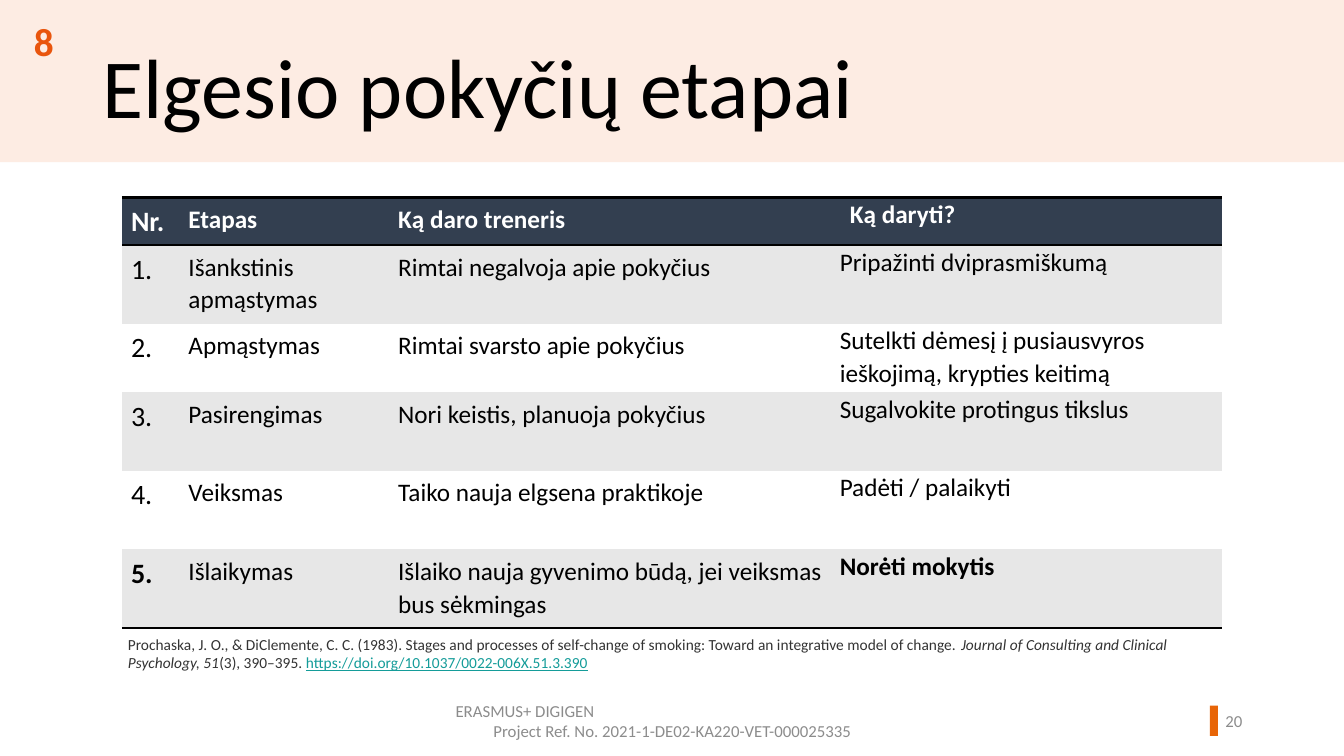
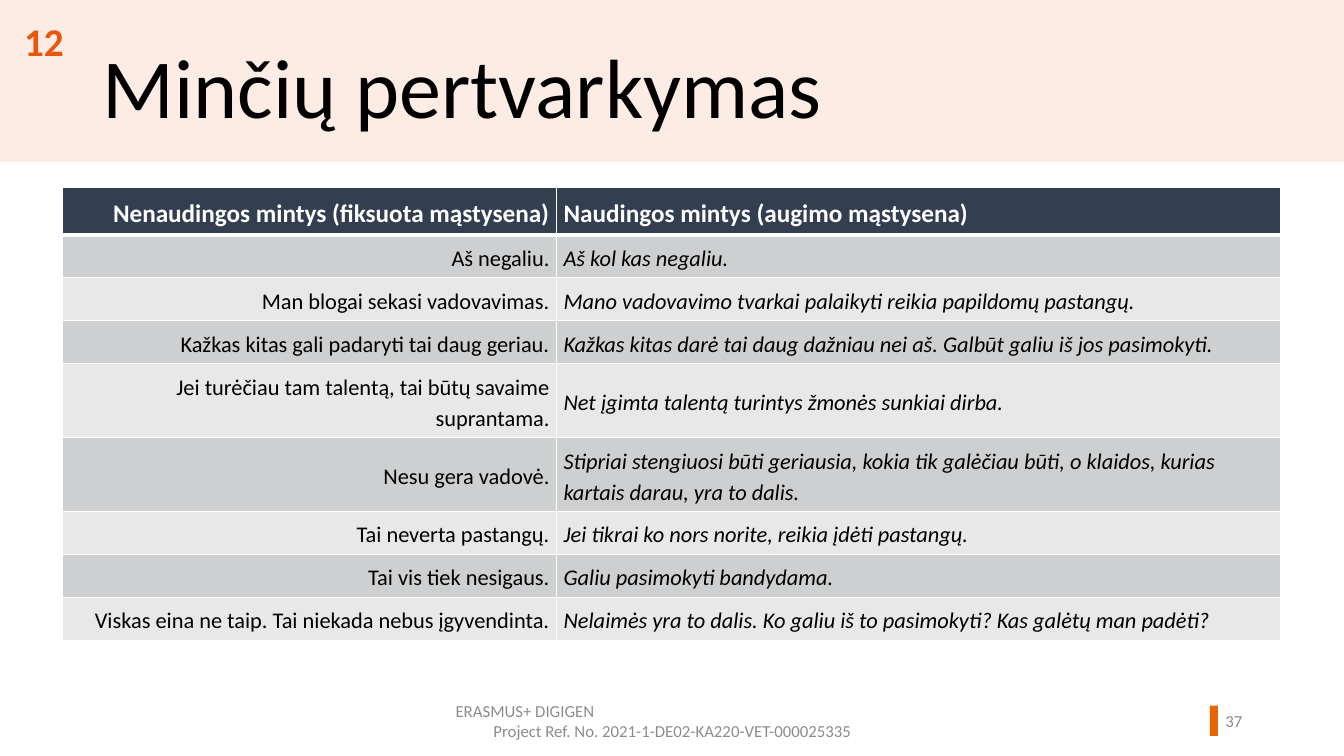
"""Build two slides on stages of behaviour change and on reframing thoughts."""
from lxml import etree
from pptx import Presentation
from pptx.dml.color import RGBColor
from pptx.enum.shapes import MSO_SHAPE
from pptx.enum.text import MSO_ANCHOR, PP_ALIGN
from pptx.oxml.ns import qn
from pptx.util import Inches, Pt

LEFT, CENTER, RIGHT = PP_ALIGN.LEFT, PP_ALIGN.CENTER, PP_ALIGN.RIGHT
TOP, MIDDLE = MSO_ANCHOR.TOP, MSO_ANCHOR.MIDDLE
RECT = MSO_SHAPE.RECTANGLE
FONT = "Calibri"
NO_STYLE = "{2D5ABB26-0587-4C30-8999-92F81FD0307C}"
WIDTH, HEIGHT = 13.33, 7.5
C = {
    "band": "FDECE3", "marker": "E86507", "number": "E9550D", "footer": "8C8C8C",
    "black": "000000", "white": "FFFFFF", "head": "333F50", "cite": "333333",
    "link": "149C99", "stripe": "E7E7E7", "dark_row": "CECFD0", "light_row": "E8E8E9",
}

FOOTER = ["ERASMUS+ DIGIGEN", "Project Ref. No. 2021-1-DE02-KA220-VET-000025335"]
STAGES = [
    ("Nr.", "Etapas", "Ką daro treneris", "Ką daryti?"),
    ("1.", "Išankstinis apmąstymas", "Rimtai negalvoja apie pokyčius",
     "Pripažinti dviprasmiškumą"),
    ("2.", "Apmąstymas", "Rimtai svarsto apie pokyčius",
     "Sutelkti dėmesį į pusiausvyros ieškojimą, krypties keitimą"),
    ("3.", "Pasirengimas", "Nori keistis, planuoja pokyčius",
     "Sugalvokite protingus tikslus"),
    ("4.", "Veiksmas", "Taiko nauja elgsena praktikoje", "Padėti / palaikyti"),
    ("5.", "Išlaikymas", "Išlaiko nauja gyvenimo būdą, jei veiksmas bus sėkmingas",
     "Norėti mokytis"),
]
BOLD_STAGES = ("5.", "Norėti mokytis")
CITATION = [
    ("Prochaska, J. O., & DiClemente, C. C. (1983). Stages and processes of self-change "
     "of smoking: Toward an integrative model of change. ", {}),
    ("Journal of Consulting and Clinical Psychology, 51", {"italic": True}),
    ("(3), 390–395. ", {}),
    ("https://doi.org/10.1037/0022-006X.51.3.390", {"underline": True, "color": "link"}),
]
THOUGHTS = [
    ("Nenaudingos mintys (fiksuota mąstysena)", "Naudingos mintys (augimo mąstysena)"),
    ("Aš negaliu.", "Aš kol kas negaliu."),
    ("Man blogai sekasi vadovavimas.",
     "Mano vadovavimo tvarkai palaikyti reikia papildomų pastangų."),
    ("Kažkas kitas gali padaryti tai daug geriau.",
     "Kažkas kitas darė tai daug dažniau nei aš. Galbūt galiu iš jos pasimokyti."),
    ("Jei turėčiau tam talentą, tai būtų savaime suprantama.",
     "Net įgimta talentą turintys žmonės sunkiai dirba."),
    ("Nesu gera vadovė.",
     "Stipriai stengiuosi būti geriausia, kokia tik galėčiau būti, o klaidos, "
     "kurias kartais darau, yra to dalis."),
    ("Tai neverta pastangų.", "Jei tikrai ko nors norite, reikia įdėti pastangų."),
    ("Tai vis tiek nesigaus.", "Galiu pasimokyti bandydama."),
    ("Viskas eina ne taip. Tai niekada nebus įgyvendinta.",
     "Nelaimės yra to dalis. Ko galiu iš to pasimokyti? Kas galėtų man padėti?"),
]


def rgb(name):
    return RGBColor.from_string(C[name])


def add_run(p, text, size, color="black", **style):
    r = p.add_run()
    r.text = text
    r.font.color.rgb = rgb(color)
    for key, value in {"name": FONT, "size": Pt(size), **style}.items():
        setattr(r.font, key, value)


def add_text(s, box, paragraphs, size, color="black", anchor=TOP, spacing=None, **style):
    tf = s.shapes.add_textbox(*map(Inches, box)).text_frame
    tf.word_wrap, tf.vertical_anchor = True, anchor
    for i, (align, runs) in enumerate(paragraphs):
        p = tf.add_paragraph() if i else tf.paragraphs[0]
        p.alignment, p.line_spacing = align, spacing
        for text, extra in runs:
            add_run(p, text, size, **{"color": color, **style, **extra})


def add_rect(s, box, color):
    sp = s.shapes.add_shape(RECT, *map(Inches, box))
    sp.shadow.inherit = False
    sp.fill.solid()
    sp.fill.fore_color.rgb = rgb(color)
    sp.line.fill.background()


def add_slide(prs, section, title, page):
    s = prs.slides.add_slide(prs.slide_layouts[6])
    add_rect(s, (0, 0, WIDTH, 1.61), "band")
    add_rect(s, (12, 7, 0.08, 0.3), "marker")
    add_text(s, (0.92, 0.41, 10.69, 0.85), [(LEFT, [(title, {})])], 60, spacing=0.9)
    add_text(s, (0.09, 0.12, 0.69, 0.57), [(CENTER, [(section, {})])], 28, "number", bold=True)
    lines = [(align, [(text, {})]) for align, text in zip((LEFT, CENTER), FOOTER)]
    add_text(s, (4.42, 6.95, 4.5, 0.4), lines, 12, "footer", MIDDLE)
    add_text(s, (11.77, 6.95, 0.65, 0.4), [(RIGHT, [(page, {})])], 12, "footer", MIDDLE)
    return s


def add_border(cell, edge, color, width):
    ln = etree.SubElement(cell._tc.get_or_add_tcPr(), qn(f"a:ln{edge}"), w=str(Pt(width)))
    fill = etree.SubElement(ln, qn("a:solidFill"))
    etree.SubElement(fill, qn("a:srgbClr"), val=C[color])


def add_table(s, left, top, cols, heights, rows, cell_format):
    box = (left, top, sum(cols), sum(heights))
    t = s.shapes.add_table(len(rows), len(cols), *map(Inches, box)).table
    t._tbl.tblPr.find(qn("a:tableStyleId")).text = NO_STYLE
    for col, width in zip(t.columns, cols):
        col.width = Inches(width)
    for row, height in zip(t.rows, heights):
        row.height = Inches(height)
    for i, row in enumerate(rows):
        for j, text in enumerate(row):
            cell, f = t.cell(i, j), cell_format(i, j, text)
            for edge, (color, width) in f["borders"].items():
                add_border(cell, edge, color, width)
            cell.fill.solid()
            cell.fill.fore_color.rgb = rgb(f["fill"])
            for side, inset in zip(("left", "top", "right", "bottom"), f["insets"]):
                setattr(cell, f"margin_{side}", Inches(inset))
            cell.vertical_anchor = f["anchor"]
            p = cell.text_frame.paragraphs[0]
            for key, value in f["paragraph"].items():
                setattr(p, key, value)
            add_run(p, text, **f["font"])


def stage_format(i, j, text):
    head, last_col = i == 0, j == 3
    rule = ("black", 2)
    edges = "TB" if head else "B" if i == len(STAGES) - 1 else ""
    insets = (0.1 if head else 0, 0, 0, 0) if last_col else (0.09, 0.05, 0.09, 0.05)
    return {
        "borders": {edge: rule for edge in edges},
        "fill": "head" if head else "stripe" if i % 2 else "white",
        "insets": insets,
        "anchor": TOP,
        "paragraph": {"line_spacing": 1.07, "space_after": Pt(8)},
        "font": {"size": 18 if j else 20, "color": "white" if head else "black",
                 "bold": head or text in BOLD_STAGES},
    }


def thought_format(i, j, text):
    head = i == 0
    borders = {edge: ("white", 1) for edge in "LRTB"}
    if i < 2:
        borders["B" if head else "T"] = ("white", 3)
    return {
        "borders": borders,
        "fill": "head" if head else "dark_row" if i % 2 else "light_row",
        "insets": (0.07, 0.06, 0.07, 0.06),
        "anchor": TOP if head else MIDDLE,
        "paragraph": {"alignment": LEFT if j else RIGHT, "line_spacing": 1.15,
                      "space_after": Pt(10)},
        "font": {"size": 18 if head else 16, "color": "white" if head else "black",
                 "bold": head, "italic": bool(j) and not head},
    }


def main():
    prs = Presentation()
    prs.slide_width, prs.slide_height = Inches(WIDTH), Inches(HEIGHT)

    s = add_slide(prs, "8", "Elgesio pokyčių etapai", "20")
    add_table(s, 1.21, 1.96, (0.57, 2.08, 4.47, 3.79),
              (0.47, 0.78, 0.68, 0.78, 0.78, 0.78), STAGES, stage_format)
    add_text(s, (1.17, 6.25, 10.96, 0.47), [(LEFT, CITATION)], 11, "cite")

    s = add_slide(prs, "12", "Minčių pertvarkymas", "37")
    heights = [0.47] + [0.42] * 3 + [0.73] * 2 + [0.42] * 3
    add_table(s, 0.62, 1.86, (4.9, 7.18), heights, THOUGHTS, thought_format)

    prs.save("out.pptx")


if __name__ == "__main__":
    main()
